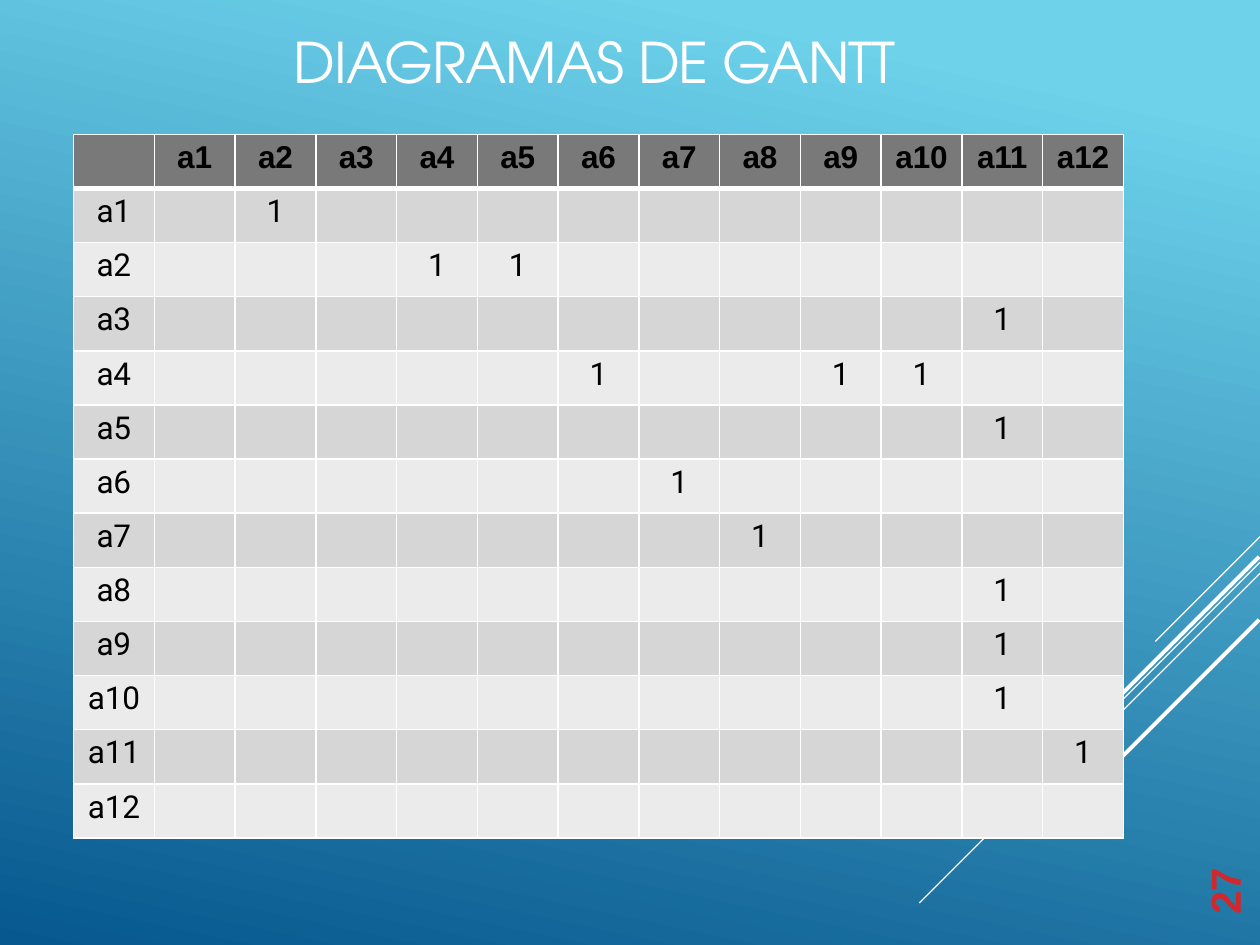
from dataclasses import dataclass

from lxml import etree
from pptx import Presentation
from pptx import util as u
from pptx.dml import color
from pptx.enum import shapes, text
from pptx.oxml import ns


@dataclass(frozen=True)
class Theme:
    sky: str = "6ED2EB"
    deep: str = "06588E"
    white: str = "FFFFFF"
    black: str = "000000"
    red: str = "D1282D"
    header: str = "797979"
    bands: tuple = ("D6D6D6", "EBEBEB")
    title_font: str = "TeX Gyre Adventor"
    label_font: str = "Arial"
    body_font: str = "Roboto"
    title_size: int = 32
    number_size: int = 24
    cell_size: int = 18


class GanttSlide:
    """Hold the theme and the current slide, and draw each kind of element."""

    def __init__(self, deck, theme):
        self.theme = theme
        self.slide = deck.slides.add_slide(deck.slide_layouts[5])

    def background(self, angle):
        fill = self.slide.background.fill
        fill.gradient()
        fill.gradient_angle = angle
        stops = ((0.1, self.theme.sky), (1, self.theme.deep))
        for stop, (position, shade) in zip(fill.gradient_stops, stops):
            stop.position = position
            stop.color.rgb = color.RGBColor.from_string(shade)

    def format(self, paragraph, font, size, shade, bold=False, spacing=0.0):
        for run in paragraph.runs:
            run.font.name = font
            run.font.size = u.Pt(size)
            run.font.bold = bold
            run.font.color.rgb = color.RGBColor.from_string(shade)
            run.font._element.set("spc", str(round(spacing * 100)))

    def frame(self, shape, wording, left, top, width, height):
        shape.left, shape.top = u.Pt(left), u.Pt(top)
        shape.width, shape.height = u.Pt(width), u.Pt(height)
        body = shape.text_frame
        body.margin_left = body.margin_right = body.margin_top = body.margin_bottom = 0
        body.word_wrap = True
        body.text = wording
        body.paragraphs[0].alignment = text.PP_ALIGN.LEFT
        return body

    def title(self, wording, *place):
        body = self.frame(self.slide.shapes.title, wording, *place)
        body.margin_top = u.Pt(1)
        body.margin_left = u.Pt(1)
        body.auto_size = text.MSO_AUTO_SIZE.NONE
        body.vertical_anchor = text.MSO_ANCHOR.MIDDLE
        body.paragraphs[0].space_before = u.Pt(0.9)
        self.format(body.paragraphs[0], self.theme.title_font,
                    self.theme.title_size, self.theme.white, spacing=-0.6)

    def page_number(self, wording, *place):
        box = self.slide.shapes.add_textbox(0, 0, 0, 0)
        body = self.frame(box, wording, *place)
        body._txBody.bodyPr.set("vert", "vert270")
        body.margin_bottom = u.Pt(1)
        body.paragraphs[0].line_spacing = u.Pt(27.6)
        self.format(body.paragraphs[0], self.theme.label_font,
                    self.theme.number_size, self.theme.red, True, -0.1)

    def ray(self, right, top, reach, weight):
        ray = self.slide.shapes.add_connector(
            shapes.MSO_CONNECTOR.STRAIGHT, u.Pt(right), u.Pt(top),
            u.Pt(right - reach), u.Pt(top + reach))
        ray.line.color.rgb = color.RGBColor.from_string(self.theme.white)
        ray.line.width = u.Pt(weight)
        etree.SubElement(ray._element.spPr, ns.qn("a:effectLst"))

    def border(self, cell, side, weight):
        edge = etree.SubElement(cell._tc.get_or_add_tcPr(), ns.qn(f"a:ln{side}"),
                                w=str(u.Pt(weight)))
        paint = etree.SubElement(edge, ns.qn("a:solidFill"))
        etree.SubElement(paint, ns.qn("a:srgbClr"), val=self.theme.white)

    def cell(self, cell, wording, row):
        theme = self.theme
        heading = row == 0
        weights = {"L": 1, "R": 1, "T": 3 if row == 1 else 1, "B": 3 if heading else 1}
        for side, weight in weights.items():
            self.border(cell, side, weight)
        cell.fill.solid()
        shade = theme.header if heading else theme.bands[(row - 1) % 2]
        cell.fill.fore_color.rgb = color.RGBColor.from_string(shade)
        cell.margin_left = cell.margin_right = cell.margin_bottom = 0
        cell.margin_top = u.Pt(2.9)
        cell.text_frame.text = wording
        paragraph = cell.text_frame.paragraphs[0]
        paragraph.alignment = text.PP_ALIGN.CENTER
        paragraph.space_before = u.Pt(3.1)
        self.format(paragraph, theme.label_font if heading else theme.body_font,
                    theme.cell_size, theme.black, heading,
                    -0.1 if wording.startswith("a") else 0)

    def matrix(self, activities, successors, left, top, column, row):
        count = len(activities) + 1
        grid = self.slide.shapes.add_table(
            count, count, u.Pt(left), u.Pt(top),
            u.Pt(column * count), u.Pt(row * count)).table
        grid.horz_banding = False
        for band in grid.columns:
            band.width = u.Pt(column)
        for band in grid.rows:
            band.height = u.Pt(row)
        lines = [["", *activities]]
        for activity in activities:
            followers = successors.get(activity, ())
            lines.append([activity, *("1" if a in followers else "" for a in activities)])
        for i, line in enumerate(lines):
            for j, wording in enumerate(line):
                self.cell(grid.cell(i, j), wording, i)


def main():
    deck = Presentation()
    deck.slide_width, deck.slide_height = u.Pt(720), u.Pt(540)
    page = GanttSlide(deck, Theme())
    page.background(258)
    rays = ((720, 306.7, 59.8, 0.75), (720, 321.3, 194.7, 0.75),
            (720, 327.6, 123.8, 0.75), (719.5, 318.2, 113, 2.25),
            (719.5, 354.2, 82, 2.25))
    for ray in rays:
        page.ray(*ray)
    page.title("DIAGRAMAS DE GANTT", 167, 16.5, 351, 35.5)
    page.page_number("27", 686.2, 494.6, 28.8, 28.8)
    activities = [f"a{n}" for n in range(1, 13)]
    successors = {
        "a1": ["a2"], "a2": ["a4", "a5"], "a3": ["a11"],
        "a4": ["a6", "a9", "a10"], "a5": ["a11"], "a6": ["a7"],
        "a7": ["a8"], "a8": ["a11"], "a9": ["a11"], "a10": ["a11"],
        "a11": ["a12"],
    }
    page.matrix(activities, successors, 42, 76.8, 46.15, 30.95)
    deck.save("out.pptx")


if __name__ == "__main__":
    main()
